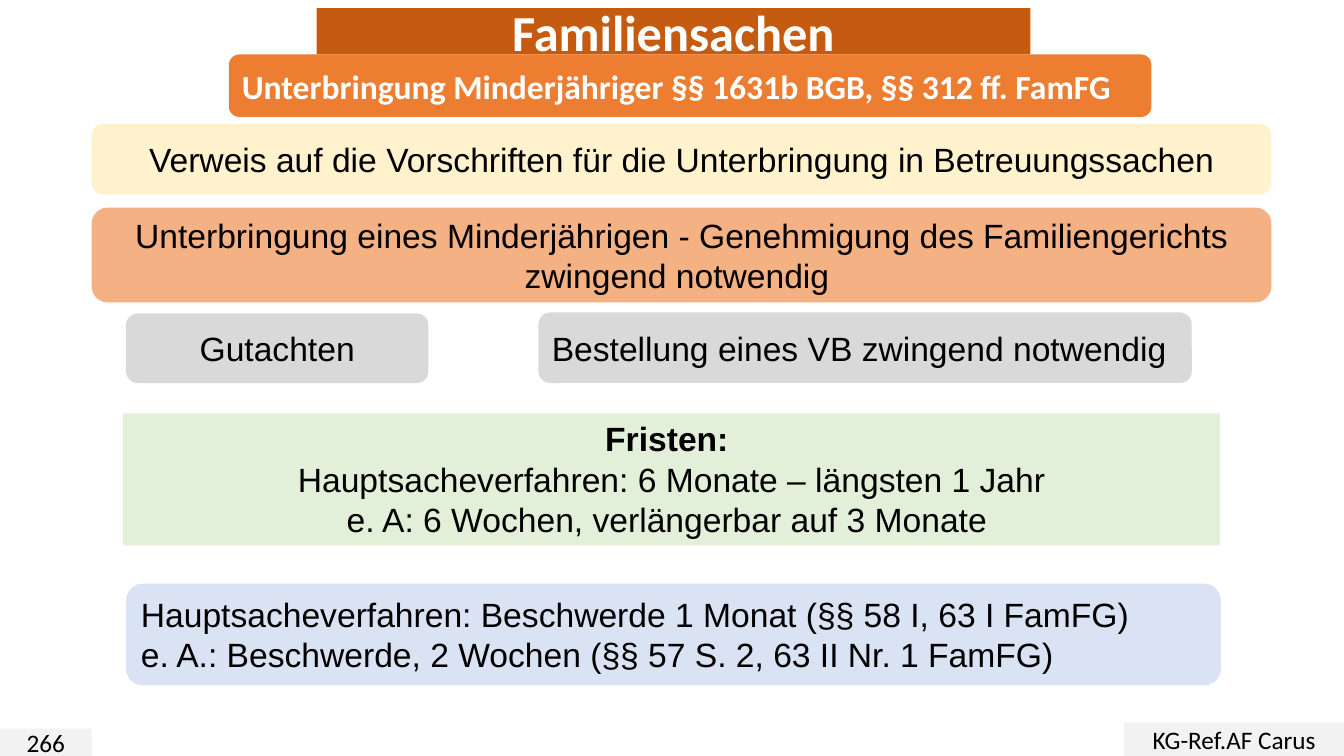
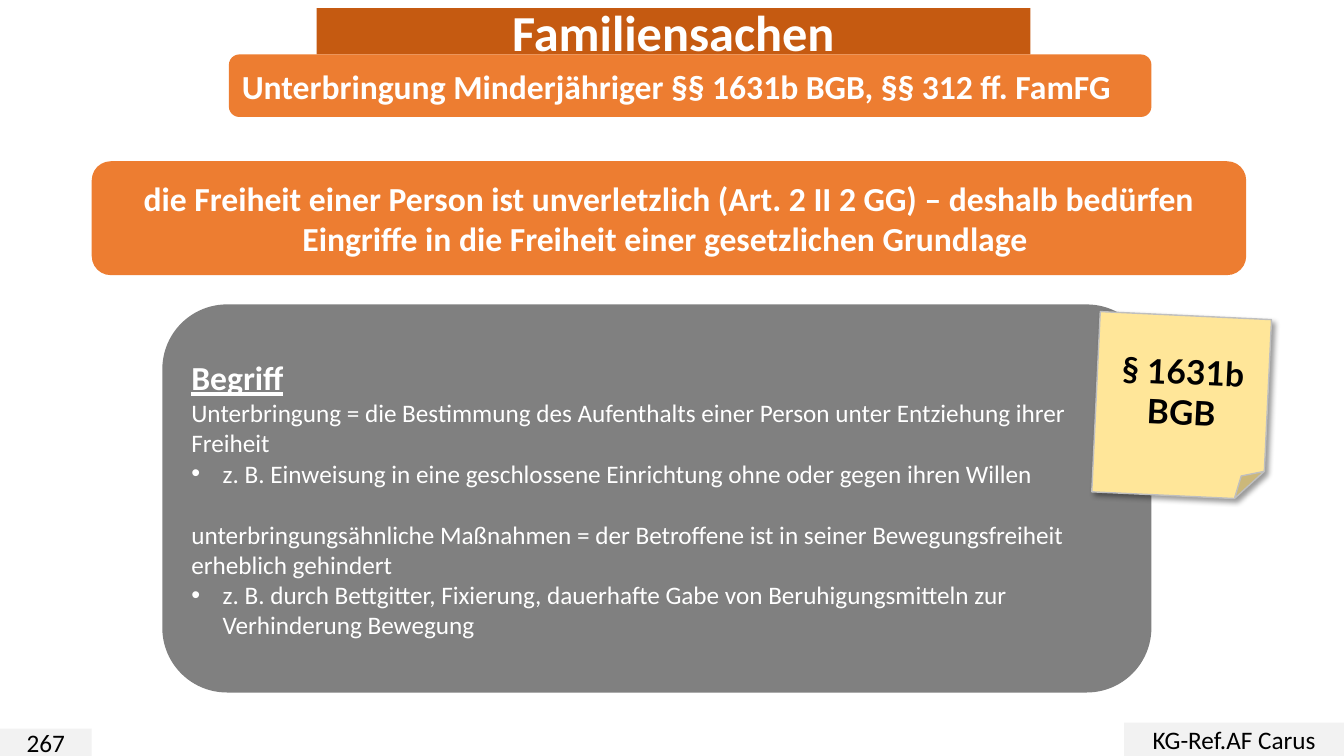
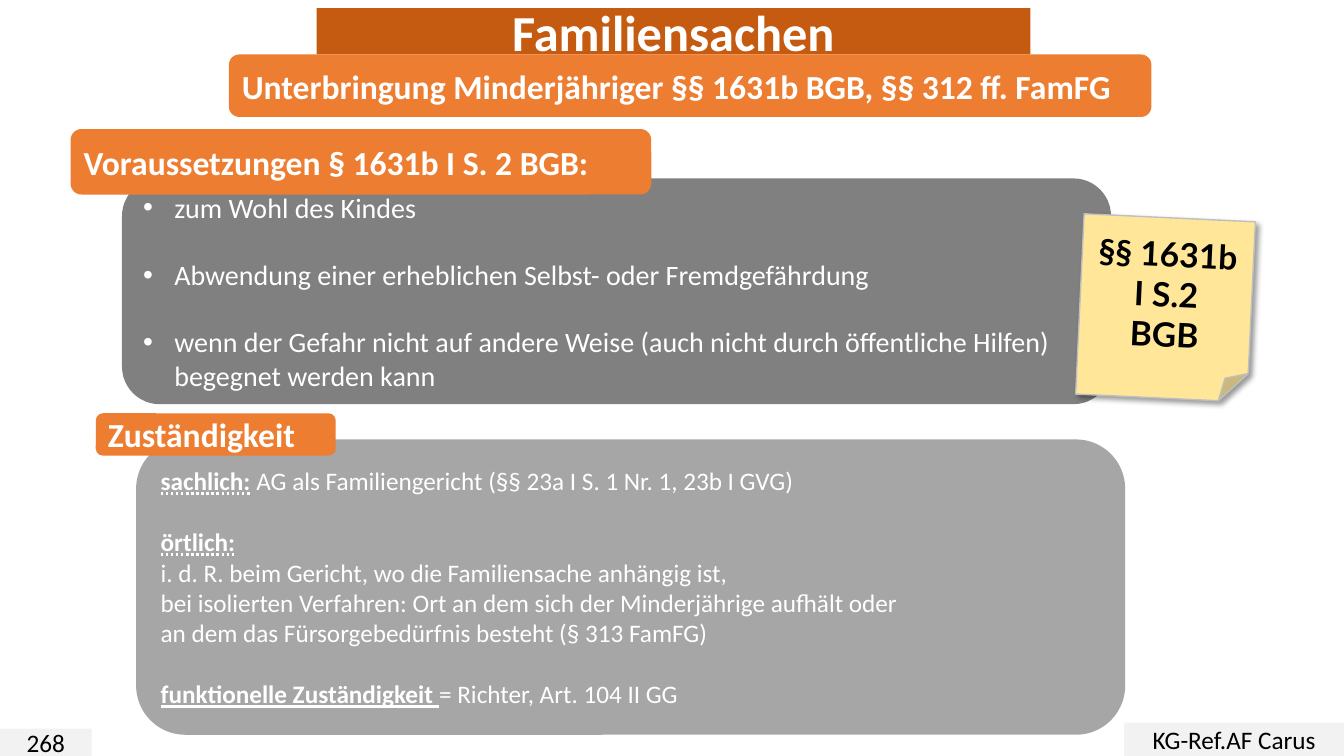
from dataclasses import dataclass, field

from pptx import Presentation
from pptx import util as u
from pptx.dml.color import RGBColor
from pptx.enum import shapes, text
from pptx.oxml import parse_xml
from pptx.oxml.ns import nsdecls

ROUND = shapes.MSO_SHAPE.ROUNDED_RECTANGLE
RECT = shapes.MSO_SHAPE.RECTANGLE
NOTE = shapes.MSO_SHAPE.FOLDED_CORNER
LEFT = text.PP_ALIGN.LEFT
CENTER = text.PP_ALIGN.CENTER
MIDDLE = text.MSO_ANCHOR.MIDDLE
TOP = text.MSO_ANCHOR.TOP
DOTTED = text.MSO_UNDERLINE.DOTTED_LINE
TITLE_ONLY, ONE_LIST, TWO_LISTS = 5, 1, 3


def style(name, size, color, bold=False):
    return {"name": name, "size": u.Pt(size), "bold": bold, "color": color}


@dataclass
class Theme:
    colors: dict = field(default_factory=lambda: {
        "white": "FFFFFF", "black": "000000", "rust": "C55A11",
        "orange": "ED7D31", "peach": "F4B183", "cream": "FFF2CC",
        "green": "E2F0D9", "blue": "DAE3F3", "footer": "F2F2F2",
        "silver": "D9D9D9", "gray": "808080", "light_gray": "A6A6A6",
        "note": "FFE699", "note_edge": "BFBFBF"})
    styles: dict = field(default_factory=lambda: {
        "title": style("Calibri", 36, "white", True),
        "heading": style("Calibri", 24, "white", True),
        "plain": style("Arial", 24, "black"),
        "footer": style("Calibri", 18, "black"),
        "large_list": style("Calibri", 20, "white"),
        "list": style("Calibri", 18, "white"),
        "note": style("Lato", 24, "black", True)})
    bullet_indent: float = 0.31

    def color(self, name):
        return RGBColor.from_string(self.colors[name])


@dataclass
class Line:
    runs: list
    bullet: bool = False
    before: int = 0


def line(words, bullet=False, before=0, **changes):
    return Line([(words, changes)], bullet, before)


class Deck:
    def __init__(self, theme):
        self.theme = theme
        self.presentation = Presentation()
        self.presentation.slide_width = u.Inches(13.33)
        self.presentation.slide_height = u.Inches(7.5)
        self.slide = None

    def start(self, number, layout):
        layouts = self.presentation.slide_layouts
        self.slide = self.presentation.slides.add_slide(layouts[layout])
        self.placeholder(0, (3.14, 0.08, 7.08, 0.46), "rust",
                         ["Familiensachen"], "title", CENTER)
        self.heading((2.27, 0.54, 9.15, 0.62),
                     "Unterbringung Minderjähriger §§ 1631b BGB, §§ 312 ff. FamFG")
        for box, words in (((0, 7.23, 0.91, 0.27), str(number)),
                           ((11.15, 7.17, 2.18, 0.33), "KG-Ref.AF Carus")):
            self.box(box, "footer", [words], "footer", geometry=RECT)

    def box(self, box, fill, lines, style_name="plain", align=CENTER,
            geometry=ROUND, anchor=MIDDLE):
        shape = self.slide.shapes.add_shape(geometry, *map(u.Inches, box))
        self.paint(shape, fill)
        self.set_lines(shape, lines, style_name, align, anchor)
        return shape

    def heading(self, box, words, align=LEFT):
        self.box(box, "orange", [words], "heading", align)

    def placeholder(self, index, box, fill, lines, style_name, align=LEFT):
        shape = self.slide.placeholders[index]
        for name, value in zip(("left", "top", "width", "height"), box):
            setattr(shape, name, u.Inches(value))
        shape._element.spPr.append(parse_xml(
            f'<a:prstGeom {nsdecls("a")} prst="roundRect"><a:avLst/></a:prstGeom>'))
        self.paint(shape, fill)
        self.set_lines(shape, lines, style_name, align, MIDDLE)

    def note(self, left, top, lines):
        shape = self.box((left, top, 1.7, 1.79), "note", lines, "note", geometry=NOTE)
        shape.rotation = 2.7
        shape.line.color.rgb = self.theme.color("note_edge")
        shape.line.width = u.Pt(1)
        properties = shape._element.spPr
        effects = properties.find("{*}effectLst")
        effects.append(parse_xml(
            f'<a:outerShdw {nsdecls("a")} blurRad="{u.Pt(4)}" dist="{u.Pt(3)}" '
            'dir="2700000" algn="tl" rotWithShape="0">'
            f'<a:srgbClr val="{self.theme.colors["black"]}"><a:alpha val="40000"/>'
            '</a:srgbClr></a:outerShdw>'))

    def paint(self, shape, fill):
        shape.fill.solid()
        shape.fill.fore_color.rgb = self.theme.color(fill)
        shape.line.fill.background()
        shape.shadow.inherit = False

    def set_lines(self, shape, lines, style_name, align, anchor):
        frame = shape.text_frame
        layout = {"word_wrap": True, "auto_size": text.MSO_AUTO_SIZE.NONE,
                  "vertical_anchor": anchor}
        for name, value in layout.items():
            setattr(frame, name, value)
        for index, item in enumerate(lines):
            item = line(item) if isinstance(item, str) else item
            paragraph = frame.add_paragraph() if index else frame.paragraphs[0]
            spacing = {"alignment": align, "line_spacing": 1.0,
                       "space_before": u.Pt(item.before), "space_after": u.Pt(0)}
            for name, value in spacing.items():
                setattr(paragraph, name, value)
            self.set_bullet(paragraph, item.bullet)
            for words, changes in item.runs:
                run = paragraph.add_run()
                run.text = words
                self.set_font(run.font, {**self.theme.styles[style_name], **changes})

    def set_bullet(self, paragraph, bullet):
        properties = paragraph._p.get_or_add_pPr()
        indent = u.Inches(self.theme.bullet_indent) if bullet else 0
        properties.set("marL", str(indent))
        properties.set("indent", str(-indent))
        if bullet:
            properties.append(parse_xml(f'<a:buFont {nsdecls("a")} typeface="Arial"/>'))
            properties.append(parse_xml(f'<a:buChar {nsdecls("a")} char="•"/>'))
        else:
            properties.append(parse_xml(f'<a:buNone {nsdecls("a")}/>'))

    def set_font(self, font, values):
        for name, value in values.items():
            if name == "color":
                font.color.rgb = self.theme.color(value)
            else:
                setattr(font, name, value)


def build_overview(deck):
    deck.start(266, TITLE_ONLY)
    deck.box((0.91, 1.23, 11.7, 0.7), "cream",
             ["Verweis auf die Vorschriften für die Unterbringung in Betreuungssachen"])
    deck.box((0.91, 2.06, 11.7, 0.94), "peach",
             ["Unterbringung eines Minderjährigen - Genehmigung des Familiengerichts "
              "zwingend notwendig "])
    deck.box((1.25, 3.11, 3, 0.69), "silver", ["Gutachten"])
    deck.box((5.34, 3.1, 6.48, 0.7), "silver",
             ["Bestellung eines VB zwingend notwendig"], align=LEFT)
    deck.box((1.22, 4.1, 10.88, 1.31), "green",
             [line("Fristen: ", bold=True),
              "Hauptsacheverfahren: 6 Monate – längsten 1 Jahr",
              "e. A: 6 Wochen, verlängerbar auf 3 Monate "],
             geometry=RECT, anchor=TOP)
    deck.box((1.25, 5.79, 10.86, 1.01), "blue",
             ["Hauptsacheverfahren: Beschwerde 1 Monat (§§ 58 I, 63 I FamFG)",
              "e. A.: Beschwerde, 2 Wochen (§§ 57 S. 2, 63 II Nr. 1 FamFG)"],
             align=LEFT, anchor=TOP)


def build_definition(deck):
    deck.start(267, ONE_LIST)
    deck.heading((0.91, 1.6, 11.45, 1.13),
                 "die Freiheit einer Person ist unverletzlich (Art. 2 II 2 GG) – deshalb "
                 "bedürfen Eingriffe in die Freiheit einer gesetzlichen Grundlage ", CENTER)
    deck.placeholder(1, (1.61, 3.02, 9.81, 3.85), "gray", [
        line("Begriff", size=u.Pt(24), bold=True, underline=True),
        "Unterbringung = die Bestimmung des Aufenthalts einer Person unter Entziehung "
        "ihrer Freiheit",
        line("z. B. Einweisung in eine geschlossene Einrichtung ohne oder gegen ihren "
             "Willen", bullet=True),
        line("unterbringungsähnliche Maßnahmen = der Betroffene ist in seiner "
             "Bewegungsfreiheit erheblich gehindert", before=22),
        line("z. B. durch Bettgitter, Fixierung, dauerhafte Gabe von "
             "Beruhigungsmitteln zur Verhinderung Bewegung", bullet=True)], "list")
    deck.note(10.87, 3.13, ["§ 1631b", "BGB"])


def build_requirements(deck):
    deck.start(268, TWO_LISTS)
    deck.placeholder(1, (1.21, 1.77, 9.81, 2.24), "gray", [
        line("zum Wohl des Kindes", bullet=True),
        line("Abwendung einer erheblichen Selbst- oder Fremdgefährdung",
             bullet=True, before=24),
        line("wenn der Gefahr nicht auf andere Weise (auch nicht durch öffentliche "
             "Hilfen) begegnet werden kann", bullet=True, before=24)], "large_list")
    dotted = {"bold": True, "underline": DOTTED}
    deck.placeholder(2, (1.35, 4.36, 9.81, 2.93), "light_gray", [
        Line([("sachlich:", dotted),
              (" AG als Familiengericht (§§ 23a I S. 1 Nr. 1, 23b I GVG)", {})]),
        line("örtlich:", before=22, **dotted),
        "i. d. R. beim Gericht, wo die Familiensache anhängig ist,",
        "bei isolierten Verfahren: Ort an dem sich der Minderjährige aufhält oder",
        "an dem das Fürsorgebedürfnis besteht (§ 313 FamFG)",
        Line([("funktionelle Zuständigkeit ", {"bold": True, "underline": True}),
              ("= Richter, Art. 104 II GG", {})], before=22)], "list")
    deck.heading((0.7, 1.28, 5.76, 0.65), "Voraussetzungen § 1631b I S. 2 BGB:")
    deck.heading((0.95, 4.1, 2.38, 0.42), "Zuständigkeit")
    deck.note(10.71, 2.16, ["§§ 1631b", "I S.2", "BGB"])


def main():
    deck = Deck(Theme())
    for build in (build_overview, build_definition, build_requirements):
        build(deck)
    deck.presentation.save("out.pptx")


if __name__ == "__main__":
    main()
